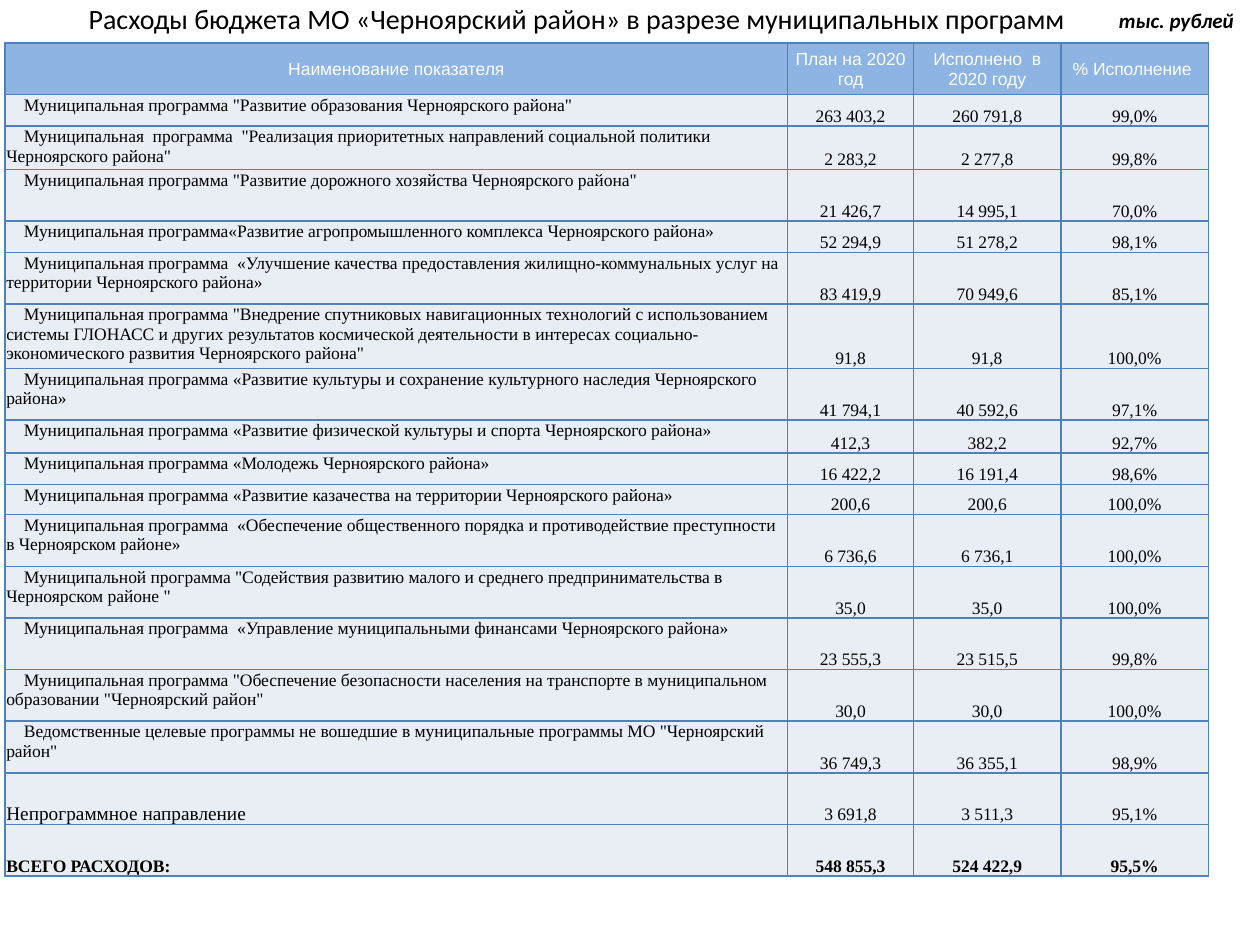
from dataclasses import dataclass

from lxml.etree import SubElement
from pptx import Presentation
from pptx.dml.color import RGBColor
from pptx.enum.text import MSO_ANCHOR as Anchor, MSO_AUTO_SIZE as AutoSize, PP_ALIGN as Align
from pptx.oxml.ns import qn
from pptx.util import Inches, Pt

BLACK = RGBColor(0x00, 0x00, 0x00)
WHITE = RGBColor(0xFF, 0xFF, 0xFF)
HEADER_BLUE = RGBColor(0x8E, 0xB4, 0xE3)
BODY_BLUE = RGBColor(0xE9, 0xED, 0xF4)
BORDER_BLUE = RGBColor(0x4F, 0x81, 0xBD)

SLIDE_WIDTH, SLIDE_HEIGHT = Inches(10), Inches(7.5)
GRID_COLUMNS, GRID_ROWS = 1000, 750
TABLE_COLUMNS = (621, 100, 117, 117)
NARROW, MEDIUM, TALL, TALLEST = 25, 34, 41, 51
FIRST_LINE_INDENT = 14


@dataclass(frozen=True)
class Program:
    name: str
    plan: str
    spent: str
    share: str
    height: int = TALL
    indent: int = FIRST_LINE_INDENT
    name_anchor: Anchor = Anchor.TOP
    name_size: int = 10
    bold: bool = False


HEADINGS = ("Наименование показателя", "План на 2020 год", "Исполнено  в 2020 году", "% Исполнение ")
PROGRAMS = (
    Program('Муниципальная программа "Развитие образования Черноярского района"',
            "263 403,2", "260 791,8", "99,0%", NARROW),
    Program('Муниципальная  программа  "Реализация приоритетных направлений социальной политики '
            'Черноярского района"', "2 283,2", "2 277,8", "99,8%", MEDIUM),
    Program('Муниципальная программа "Развитие дорожного хозяйства Черноярского района"',
            "21 426,7", "14 995,1", "70,0%"),
    Program("Муниципальная программа«Развитие агропромышленного комплекса Черноярского района»",
            "52 294,9", "51 278,2", "98,1%", NARROW),
    Program("Муниципальная программа  «Улучшение качества предоставления жилищно-коммунальных услуг "
            "на территории Черноярского района»", "83 419,9", "70 949,6", "85,1%"),
    Program('Муниципальная программа "Внедрение спутниковых навигационных технологий с использованием '
            'системы ГЛОНАСС и других результатов космической деятельности в интересах '
            'социально-экономического развития Черноярского района"',
            "91,8", "91,8", "100,0%", TALLEST),
    Program("Муниципальная программа «Развитие культуры и сохранение культурного наследия "
            "Черноярского района»", "41 794,1", "40 592,6", "97,1%"),
    Program("Муниципальная программа «Развитие физической культуры и спорта Черноярского района»",
            "412,3", "382,2", "92,7%", NARROW + 1),
    Program("Муниципальная программа «Молодежь Черноярского района»",
            "16 422,2", "16 191,4", "98,6%", NARROW),
    Program("Муниципальная программа «Развитие казачества на территории Черноярского района»",
            "200,6", "200,6", "100,0%", NARROW - 1),
    Program("Муниципальная программа  «Обеспечение общественного порядка и противодействие преступности "
            "в Черноярском районе»", "6 736,6", "6 736,1", "100,0%"),
    Program('Муниципальной программа "Содействия развитию малого и среднего предпринимательства в '
            'Черноярском районе "', "35,0", "35,0", "100,0%"),
    Program("Муниципальная программа  «Управление муниципальными финансами Черноярского района»",
            "23 555,3", "23 515,5", "99,8%"),
    Program('Муниципальная программа "Обеспечение безопасности населения на транспорте в муниципальном '
            'образовании "Черноярский район"', "30,0", "30,0", "100,0%"),
    Program('Ведомственные целевые программы не вошедшие в муниципальные программы МО "Черноярский район"',
            "36 749,3", "36 355,1", "98,9%"),
    Program("Непрограммное направление", "3 691,8", "3 511,3", "95,1%",
            indent=0, name_anchor=Anchor.BOTTOM, name_size=11),
    Program("ВСЕГО РАСХОДОВ:", "548 855,3", "524 422,9", "95,5%",
            indent=0, name_anchor=Anchor.BOTTOM, bold=True),
)


def across(columns: float) -> int:
    return round(SLIDE_WIDTH * columns / GRID_COLUMNS)


def down(rows: float) -> int:
    return round(SLIDE_HEIGHT * rows / GRID_ROWS)


def write(text_frame, text: str, *, font: str, size: int, color=BLACK, align=Align.LEFT,
          bold: bool = False, italic: bool = False, indent: int = 0) -> None:
    paragraph = text_frame.paragraphs[0]
    paragraph.alignment = align
    if indent:
        properties = paragraph._p.get_or_add_pPr()
        properties.set("marL", "0")
        properties.set("indent", str(across(indent)))
    run = paragraph.add_run()
    run.text = text
    run.font.name = font
    run.font.size = Pt(size)
    run.font.bold = bold
    run.font.italic = italic
    run.font.color.rgb = color


def set_box(shape, left: float, top: float, width: float, height: float, wrap: bool = True):
    shape.left, shape.top = across(left), down(top)
    shape.width, shape.height = across(width), down(height)
    frame = shape.text_frame
    frame.margin_left = frame.margin_right = frame.margin_top = frame.margin_bottom = 0
    frame.vertical_anchor = Anchor.TOP
    frame.word_wrap = wrap
    frame.auto_size = AutoSize.SHAPE_TO_FIT_TEXT
    return frame


def add_borders(cell) -> None:
    properties = cell._tc.get_or_add_tcPr()
    for position, side in enumerate(("lnL", "lnR", "lnT", "lnB")):
        line = properties.makeelement(qn(f"a:{side}"), {"w": str(Pt(1))})
        fill = SubElement(line, qn("a:solidFill"))
        SubElement(fill, qn("a:srgbClr"), val=str(BORDER_BLUE))
        properties.insert(position, line)


def fill_cell(cell, text: str, *, fill: RGBColor, anchor: Anchor, **text_format) -> None:
    cell.margin_left = cell.margin_right = across(1)
    cell.margin_top, cell.margin_bottom = down(1), 0
    cell.vertical_anchor = anchor
    cell.fill.solid()
    cell.fill.fore_color.rgb = fill
    add_borders(cell)
    write(cell.text_frame, text, **text_format)


def add_program(cells, program: Program) -> None:
    style = dict(fill=BODY_BLUE, font="Times New Roman", bold=program.bold)
    fill_cell(cells[0], program.name, anchor=program.name_anchor,
              size=program.name_size, indent=program.indent, **style)
    for cell, value in zip(cells[1:], (program.plan, program.spent, program.share)):
        fill_cell(cell, value, anchor=Anchor.BOTTOM, size=10, align=Align.CENTER, **style)


def add_budget_table(slide) -> None:
    heights = [TALL] + [program.height for program in PROGRAMS]
    table = slide.shapes.add_table(
        len(heights), len(TABLE_COLUMNS), across(4), down(34),
        across(sum(TABLE_COLUMNS)), down(sum(heights))).table
    for column, width in zip(table.columns, TABLE_COLUMNS):
        column.width = across(width)
    for row, height in zip(table.rows, heights):
        row.height = down(height)
    rows = [list(row.cells) for row in table.rows]
    for cell, heading in zip(rows[0], HEADINGS):
        fill_cell(cell, heading, fill=HEADER_BLUE, anchor=Anchor.MIDDLE, font="Arial",
                  size=10, color=WHITE, align=Align.CENTER)
    for cells, program in zip(rows[1:], PROGRAMS):
        add_program(cells, program)


def main() -> None:
    presentation = Presentation()
    presentation.slide_width, presentation.slide_height = SLIDE_WIDTH, SLIDE_HEIGHT
    slide = presentation.slides.add_slide(presentation.slide_layouts[5])
    title = set_box(slide.shapes.title, -42, 1, 1000, 27)
    write(title, "Расходы бюджета МО «Черноярский район» в разрезе муниципальных программ",
          font="Calibri", size=16, align=Align.CENTER)
    units = set_box(slide.shapes.add_textbox(0, 0, 0, 0), 887, 6, 110, 20)
    write(units, "тыс. рублей", font="Calibri", size=12, bold=True, italic=True, indent=1)
    add_budget_table(slide)
    presentation.save("out.pptx")


if __name__ == "__main__":
    main()
